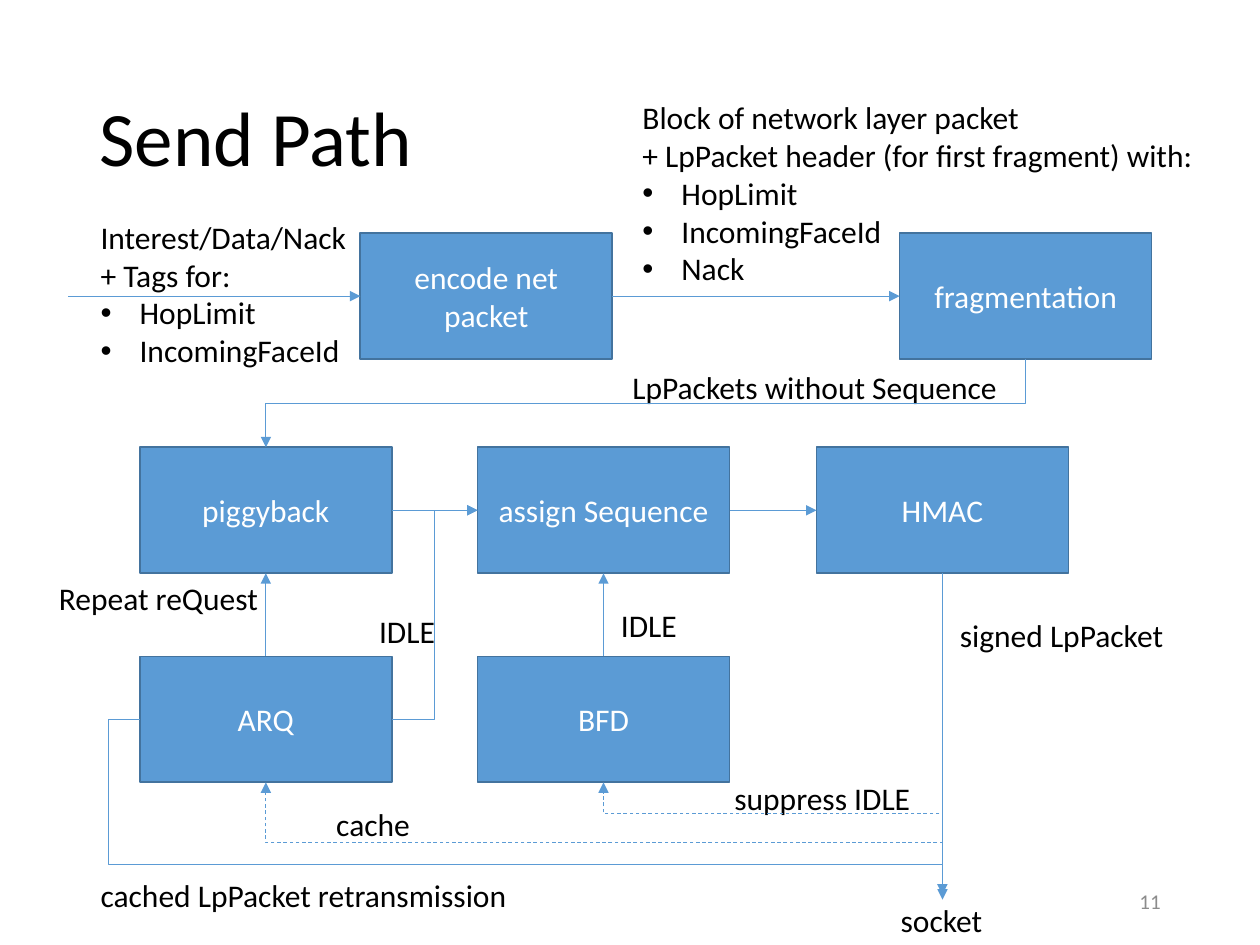
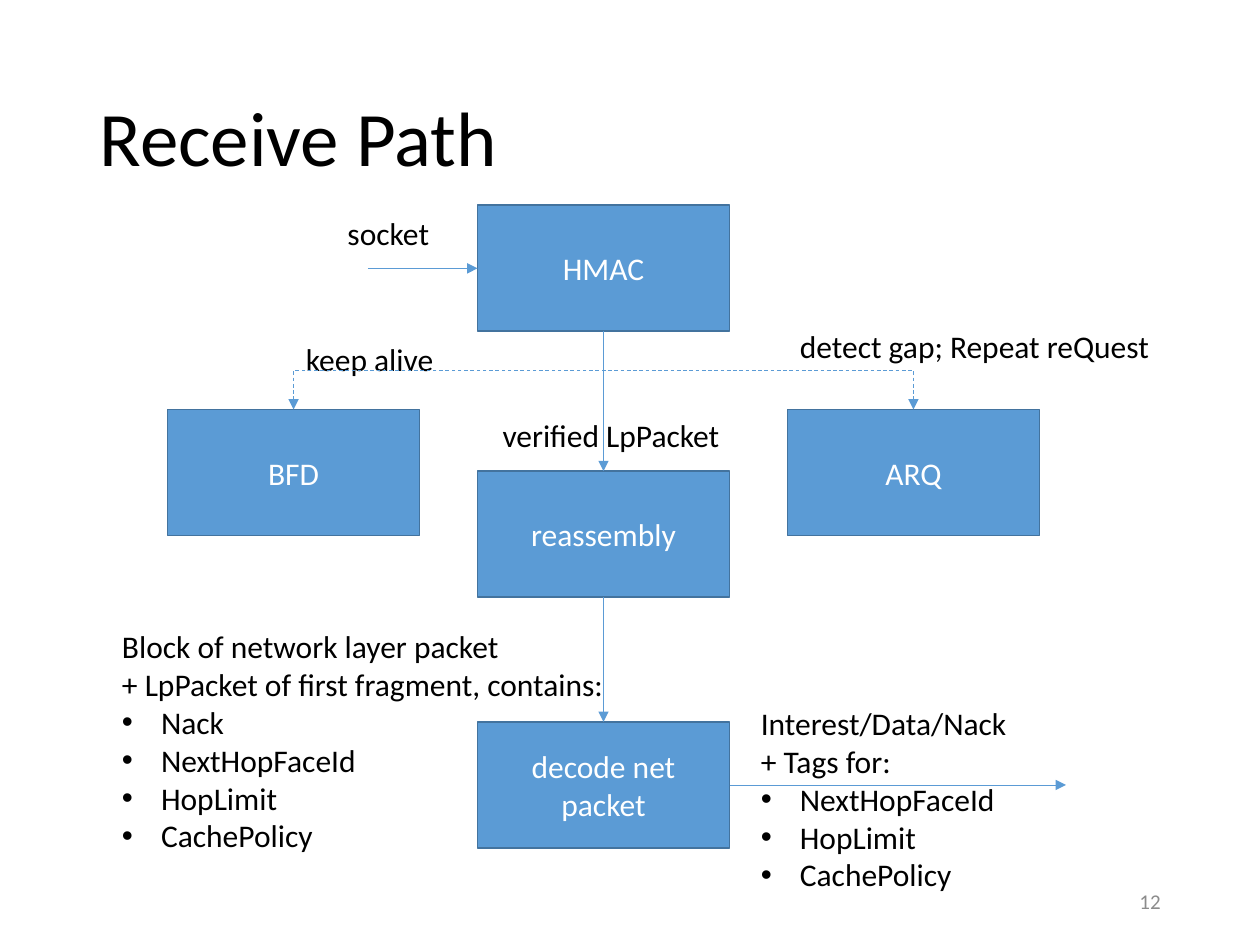
from dataclasses import dataclass

from lxml.etree import SubElement
from pptx import Presentation
from pptx.dml.color import RGBColor
from pptx.enum.dml import MSO_LINE
from pptx.enum.shapes import MSO_CONNECTOR, MSO_SHAPE
from pptx.enum.text import MSO_ANCHOR, MSO_AUTO_SIZE, PP_ALIGN
from pptx.oxml.ns import qn
from pptx.util import Inches, Pt


@dataclass(frozen=True)
class Theme:
    font: str = "Calibri"
    ink: RGBColor = RGBColor(0x00, 0x00, 0x00)
    muted: RGBColor = RGBColor(0x8C, 0x8C, 0x8C)
    light: RGBColor = RGBColor(0xFF, 0xFF, 0xFF)
    fill: RGBColor = RGBColor(0x5B, 0x9B, 0xD5)
    border: RGBColor = RGBColor(0x43, 0x73, 0x9E)
    title_size: Pt = Pt(44)
    body_size: Pt = Pt(18)
    number_size: Pt = Pt(12)


THEME = Theme()
TOP, LEFT, BOTTOM, RIGHT = range(4)
COLUMNS = (1.11, 3.79, 6.48)
UPPER, LOWER = 3.55, 5.21
SIDE_ROW = 3.25

PAGES = [
    {
        "title": "Send Path",
        "number": "11",
        "boxes": {
            "encode net packet": (2.86, 1.85),
            "fragmentation": (7.14, 1.85),
            "piggyback": (COLUMNS[0], UPPER),
            "assign Sequence": (COLUMNS[1], UPPER),
            "HMAC": (COLUMNS[2], UPPER),
            "ARQ": (COLUMNS[0], LOWER),
            "BFD": (COLUMNS[1], LOWER),
        },
        "labels": [
            (0.7, 1.68, 2.17, ["Interest/Data/Nack", "+ Tags for:"], ["HopLimit", "IncomingFaceId"]),
            (5, 0.73, 4.62,
             ["Block of network layer packet", "+ LpPacket header (for first fragment) with:"],
             ["HopLimit", "IncomingFaceId", "Nack"]),
            (4.92, 2.87, 3.11, ["LpPackets without Sequence"], []),
            (0.37, 4.55, 1.8, ["Repeat reQuest"], []),
            (7.05, 7.1, 0.86, ["socket"], []),
            (4.83, 4.76, 0.65, ["IDLE"], []),
            (2.91, 4.81, 0.65, ["IDLE"], []),
            (2.57, 6.34, 0.79, ["cache"], []),
            (7.52, 4.84, 1.83, ["signed LpPacket"], []),
            (5.73, 6.13, 1.61, ["suppress IDLE"], []),
            (0.7, 6.9, 3.46, ["cached LpPacket retransmission"], []),
        ],
        "arrows": [
            ((0.54, 2.35), ("encode net packet", LEFT), [], False),
            (("encode net packet", RIGHT), ("fragmentation", LEFT), [], False),
            (("assign Sequence", RIGHT), ("HMAC", LEFT), [], False),
            (("fragmentation", BOTTOM), ("piggyback", TOP), [3.2], False),
            (("piggyback", RIGHT), ("assign Sequence", LEFT), [], False),
            (("ARQ", TOP), ("piggyback", BOTTOM), [], False),
            (("HMAC", BOTTOM), (7.48, 7.14), [], False),
            (("BFD", TOP), ("assign Sequence", BOTTOM), [], False),
            (("ARQ", RIGHT), ("assign Sequence", LEFT), [3.45], False),
            (("HMAC", BOTTOM), ("BFD", BOTTOM), [6.46], True),
            (("HMAC", BOTTOM), ("ARQ", BOTTOM), [6.69], True),
            (("ARQ", LEFT), ("socket", TOP), [0.86, 6.86], False),
        ],
    },
    {
        "title": "Receive Path",
        "number": "12",
        "boxes": {
            "HMAC": (COLUMNS[1], 1.63),
            "reassembly": (COLUMNS[1], 3.74),
            "BFD": (1.33, SIDE_ROW),
            "ARQ": (6.25, SIDE_ROW),
            "decode net packet": (COLUMNS[1], 5.73),
        },
        "labels": [
            (2.66, 1.65, 0.86, ["socket"], []),
            (2.33, 2.65, 1.23, ["keep alive"], []),
            (6.25, 2.55, 3.01, ["detect gap; Repeat reQuest"], []),
            (3.89, 3.25, 1.94, ["verified LpPacket"], []),
            (0.87, 4.93, 4.07,
             ["Block of network layer packet", "+ LpPacket of first fragment, contains:"],
             ["Nack", "NextHopFaceId", "HopLimit", "CachePolicy"]),
            (5.94, 5.54, 2.17, ["Interest/Data/Nack", "+ Tags for:"],
             ["NextHopFaceId", "HopLimit", "CachePolicy"]),
        ],
        "arrows": [
            ((2.92, 2.13), ("HMAC", LEFT), [], False),
            (("HMAC", BOTTOM), ("reassembly", TOP), [], False),
            (("HMAC", BOTTOM), ("BFD", TOP), [2.94], True),
            (("HMAC", BOTTOM), ("ARQ", TOP), [2.94], True),
            (("reassembly", BOTTOM), ("decode net packet", TOP), [], False),
            (("decode net packet", RIGHT), (8.46, 6.23), [], False),
        ],
    },
]


def style_text(frame, size, color, align):
    for para in frame.paragraphs:
        para.alignment = align
        for span in para.runs:
            span.font.name = THEME.font
            span.font.size = size
            span.font.color.rgb = color


def add_arrow(page, shapes, start, end, lanes, dashed):
    points = []
    for place in (start, end):
        if place[0] in shapes:
            shape, side = shapes[place[0]], place[1]
            across = (0.5, 0, 0.5, 1)[side]
            down = (0, 0.5, 1, 0.5)[side]
            points.append((int(shape.left + shape.width * across), int(shape.top + shape.height * down)))
        else:
            points.append((Inches(place[0]), Inches(place[1])))
    (x1, y1), (x2, y2) = points
    kind = MSO_CONNECTOR.ELBOW if lanes else MSO_CONNECTOR.STRAIGHT
    arrow = page.shapes.add_connector(kind, x1, y1, x2, y2)
    if start[0] in shapes:
        arrow.begin_connect(shapes[start[0]], start[1])
    if end[0] in shapes:
        arrow.end_connect(shapes[end[0]], end[1])

    properties = arrow.element.spPr
    if lanes:
        vertical = start[1] in (TOP, BOTTOM)
        if vertical:
            width, height = abs(y2 - y1), abs(x2 - x1)
            frame = properties.find(qn("a:xfrm"))
            for name in ("flipH", "flipV"):
                frame.attrib.pop(name, None)
            frame.set("rot", "5400000" if x2 < x1 else "16200000")
            if x2 > x1:
                frame.set("flipH", "1")
            arrow.left, arrow.top = (x1 + x2 - width) // 2, (y1 + y2 - height) // 2
            arrow.width, arrow.height = width, height
        geometry = properties.find(qn("a:prstGeom"))
        geometry.set("prst", f"bentConnector{len(lanes) + 2}")
        guides = geometry.find(qn("a:avLst"))
        if guides is None:
            guides = SubElement(geometry, qn("a:avLst"))
        for index, lane in enumerate(lanes):
            along_y = vertical != (index == 1)
            first, last = (y1, y2) if along_y else (x1, x2)
            ratio = round((Inches(lane) - first) / (last - first) * 100000)
            SubElement(guides, qn("a:gd"), name=f"adj{index + 1}", fmla=f"val {ratio}")

    arrow.line.color.rgb = THEME.fill
    arrow.line.width = Pt(0.5)
    if dashed:
        arrow.line.dash_style = MSO_LINE.DASH
    SubElement(properties.find(qn("a:ln")), qn("a:tailEnd"), type="triangle")
    SubElement(properties, qn("a:effectLst"))


deck = Presentation()
deck.slide_width, deck.slide_height = Inches(10), Inches(7.5)

for content in PAGES:
    page = deck.slides.add_slide(deck.slide_layouts[5])
    title = page.shapes.title
    title.left, title.top = Inches(0.69), Inches(0.4)
    title.width, title.height = Inches(8.62), Inches(1.45)
    title.text_frame.text = content["title"]
    title.text_frame.auto_size = MSO_AUTO_SIZE.NONE
    title.text_frame.vertical_anchor = MSO_ANCHOR.MIDDLE
    title.text_frame.paragraphs[0].line_spacing = 0.9
    style_text(title.text_frame, THEME.title_size, THEME.ink, PP_ALIGN.LEFT)

    number = page.shapes.add_textbox(Inches(7.06), Inches(6.95), Inches(2.25), Inches(0.4))
    number.text_frame.word_wrap = True
    number.text_frame.text = content["number"]
    number.text_frame.vertical_anchor = MSO_ANCHOR.MIDDLE
    style_text(number.text_frame, THEME.number_size, THEME.muted, PP_ALIGN.RIGHT)

    shapes = {}
    for name, (left, top) in content["boxes"].items():
        box = page.shapes.add_shape(MSO_SHAPE.RECTANGLE, Inches(left), Inches(top), Inches(2), Inches(1))
        box.shadow.inherit = False
        box.fill.solid()
        box.fill.fore_color.rgb = THEME.fill
        box.line.color.rgb = THEME.border
        box.line.width = Pt(1)
        box.text_frame.word_wrap = True
        box.text_frame.text = name
        box.text_frame.vertical_anchor = MSO_ANCHOR.MIDDLE
        style_text(box.text_frame, THEME.body_size, THEME.light, PP_ALIGN.CENTER)
        shapes[name] = box

    for left, top, width, lines, bullets in content["labels"]:
        height = 0.1 + 0.3 * len(lines + bullets)
        label = page.shapes.add_textbox(Inches(left), Inches(top), Inches(width), Inches(height))
        label.text_frame.word_wrap = False
        label.text_frame.text = "\n".join(lines + bullets)
        style_text(label.text_frame, THEME.body_size, THEME.ink, PP_ALIGN.LEFT)
        for para in label.text_frame.paragraphs[len(lines):]:
            settings = para._p.get_or_add_pPr()
            settings.set("marL", str(Inches(0.31)))
            settings.set("indent", str(-Inches(0.31)))
            SubElement(settings, qn("a:buFont"), typeface="Arial")
            SubElement(settings, qn("a:buChar"), char="•")
        shapes[lines[0]] = label

    for start, end, lanes, dashed in content["arrows"]:
        add_arrow(page, shapes, start, end, lanes, dashed)

deck.save("out.pptx")
